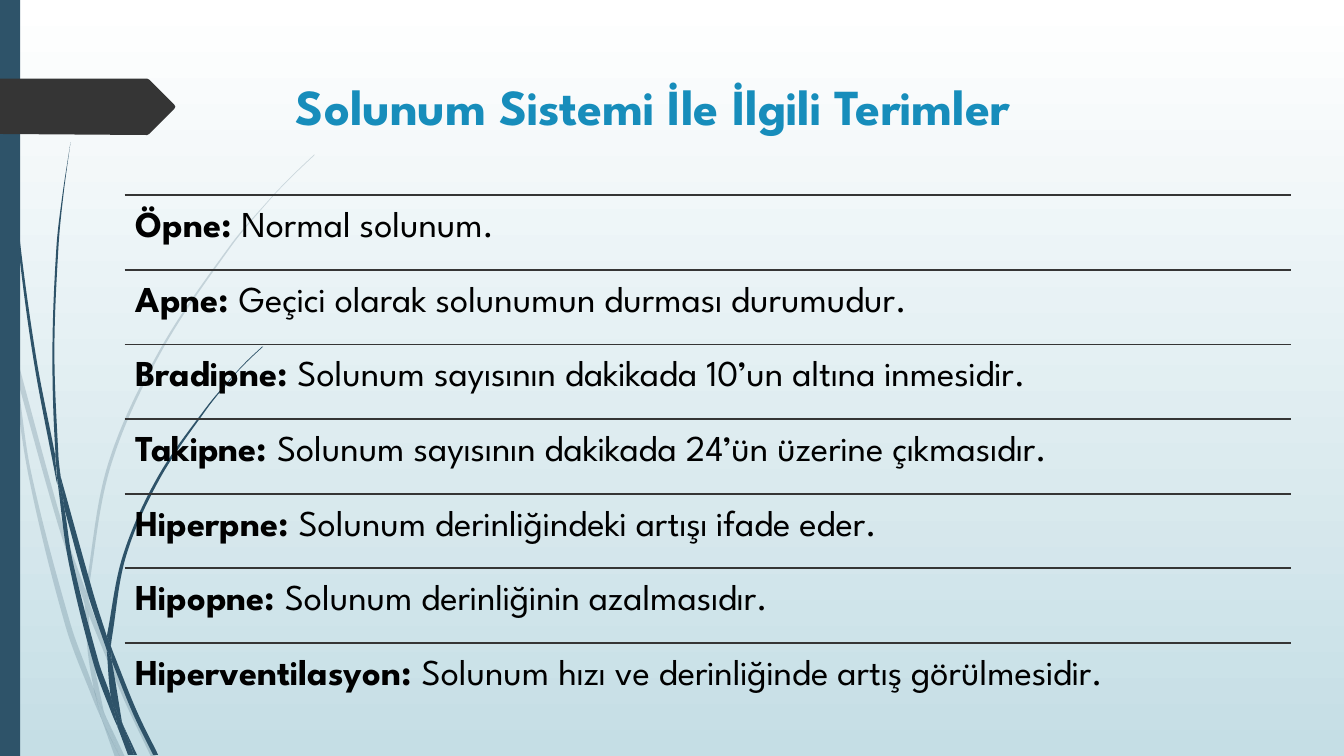
from dataclasses import dataclass

from lxml import etree
from pptx import Presentation
from pptx import util as u
from pptx.dml.color import RGBColor
from pptx.enum import lang, shapes, text
from pptx.oxml.ns import qn

Point = tuple[int, int]
FONT = "League Spartan"
NAVY, DARK, BLUE, BLACK = "2E5369", "353535", "178DBB", "000000"
LEFT, TOP, WIDTH, PITCH = 3.14, 4.92, 29.4, 1.88  # list of terms, in cm


@dataclass(frozen=True)
class Blade:
    """Piece of grass between two smooth sides, in hundredths of an inch."""
    up: list[Point]
    down: list[Point]


@dataclass(frozen=True)
class Term:
    name: str
    sense: str


FAINT = [
    Blade([(0, 282), (9, 322), (11, 350)], [(10, 344), (0, 299)]),
    Blade([(14, 345), (62, 520), (85, 586)], [(84, 599), (58, 522), (17, 376)]),
    Blade([(88, 596), (92, 607), (127, 692), (155, 751)],
          [(150, 751), (123, 694), (88, 610)]),
    Blade([(105, 711), (124, 751)], [(119, 751)]),
    Blade([(11, 350), (17, 376), (31, 469), (70, 619), (93, 683), (99, 707)],
          [(101, 714), (92, 693), (65, 621), (28, 470), (11, 350)]),
    Blade([(84, 599), (87, 646), (93, 683), (96, 692), (105, 711)],
          [(103, 706), (91, 646), (88, 610), (88, 608)]),
    Blade([(85, 586), (85, 584), (107, 461), (158, 348), (228, 244), (268, 197),
           (289, 175), (312, 153)],
          [(312, 154), (290, 175), (268, 198), (229, 245), (160, 349), (110, 462),
           (88, 584), (88, 596)]),
    Blade([(101, 714), (114, 751)], [(119, 751)]),
    Blade([(84, 599), (85, 586)], [(88, 596), (88, 610), (88, 608)]),
    Blade([(93, 683), (99, 707), (101, 714), (119, 751)], [(105, 711), (96, 692)]),
]
BOLD = [
    Blade([(3, 0), (4, 48), (7, 110), (17, 233), (33, 355), (56, 477), (57, 481)],
          [(55, 457), (55, 453), (36, 355), (19, 232), (8, 109), (5, 48), (4, 0)]),
    Blade([(60, 472), (93, 590), (106, 631)], [(106, 645), (88, 592), (64, 505)]),
    Blade([(110, 641), (113, 649), (136, 706), (157, 749)],
          [(152, 749), (132, 708), (111, 656)]),
    Blade([(57, 477), (64, 505), (72, 556), (98, 657), (110, 691), (116, 717)],
          [(117, 722), (111, 708), (93, 659), (68, 557), (57, 477)]),
    Blade([(60, 472), (58, 453), (54, 349), (58, 245), (63, 193), (70, 141)],
          [(70, 141), (62, 193), (56, 245), (52, 349), (55, 449), (60, 472)]),
    Blade([(122, 719), (136, 749)], [(133, 749)]),
    Blade([(55, 449), (60, 472), (64, 505)], [(57, 477), (55, 453)]),
    Blade([(106, 631), (122, 551), (156, 474), (204, 405), (231, 373), (245, 358),
           (260, 344)],
          [(261, 344), (245, 359), (231, 374), (205, 406), (158, 476), (125, 552),
           (111, 633), (110, 641)]),
    Blade([(117, 722), (131, 749)], [(127, 749)]),
    Blade([(106, 645), (110, 691), (116, 706), (122, 719)],
          [(121, 716), (111, 656), (109, 651)]),
    Blade([(106, 631), (110, 641), (111, 656)], [(109, 651), (106, 645)]),
    Blade([(110, 691), (116, 717), (117, 722), (130, 749)],
          [(133, 749), (122, 719), (116, 706)]),
]
ARROW = [(0, 78), (146, 78), (148, 79), (173, 104), (174, 106), (173, 108),
         (148, 133), (146, 134), (0, 133)]
TERMS = [
    Term("Öpne: ", "Normal solunum."),
    Term("Apne: ", "Geçici olarak solunumun durması durumudur."),
    Term("Bradipne: ", "Solunum sayısının dakikada 10’un altına inmesidir."),
    Term("Takipne: ", "Solunum sayısının dakikada 24’ün üzerine çıkmasıdır."),
    Term("Hiperpne: ", "Solunum derinliğindeki artışı ifade eder."),
    Term("Hipopne: ", "Solunum derinliğinin azalmasıdır."),
    Term("Hiperventilasyon: ", "Solunum hızı ve derinliğinde artış görülmesidir."),
]


def tint(code: str) -> RGBColor:
    return RGBColor.from_string(code)


def smooth(side: list[Point]) -> list[complex]:
    """Put two control points between neighbours, for cubic curves."""
    dots = [complex(*point) for point in side]
    last = len(dots) - 1
    slopes = []
    for i in range(last + 1):
        run = dots[min(i + 1, last)] - dots[max(i - 1, 0)]
        slopes.append(run / (abs(run) or 1))
    curve = dots[:1]
    for i in range(last):
        start, end = dots[i], dots[i + 1]
        reach = abs(end - start) / 3
        curve += [start + slopes[i] * reach, end - slopes[i + 1] * reach, end]
    return curve


def paint(shape, color: str, alpha: int = 100) -> None:
    shape.shadow.inherit = False
    shape.fill.solid()
    shape.fill.fore_color.rgb = tint(color)
    shape.line.fill.background()
    if alpha < 100:
        node = shape.element.spPr.find(qn("a:solidFill")).find(qn("a:srgbClr"))
        etree.SubElement(node, qn("a:alpha")).set("val", str(alpha * 1000))


def trace(slide, dots: list[complex]):
    """Draw a closed outline given in hundredths of an inch."""
    grid = u.Cm(2.54) / 100
    spots = [(round(dot.real * grid), round(dot.imag * grid)) for dot in dots]
    form = slide.shapes.build_freeform(*spots[0])
    form.add_line_segments(spots[1:], close=True)
    return form.convert_to_shape()


def bend(shape) -> None:
    """Turn each three lines of an outline into one cubic curve."""
    lines = list(shape.element.iter(qn("a:lnTo")))
    for first, second, third in zip(lines[::3], lines[1::3], lines[2::3]):
        first.tag = qn("a:cubicBezTo")
        for line in (second, third):
            first.append(line[0])
            line.getparent().remove(line)


def grow(slide, blade: Blade, alpha: int) -> None:
    up, down = smooth(blade.up), smooth(blade.down)
    gap = (down[0] - up[-1]) / 3
    shape = trace(slide, up + [up[-1] + gap, down[0] - gap] + down)
    bend(shape)
    paint(shape, NAVY, alpha)


def style(run, size: int, color: str, bold: bool) -> None:
    run.font.name, run.font.size, run.font.bold = FONT, u.Pt(size), bold
    run.font.color.rgb = tint(color)
    run.font.language_id = lang.MSO_LANGUAGE_ID.TURKISH


def frame(slide, left: float, top: float, width: float, height: float):
    """Add a wrapped text box, in cm, and return its text frame."""
    box = slide.shapes.add_textbox(u.Cm(left), u.Cm(top), u.Cm(width), u.Cm(height))
    box.text_frame.word_wrap = True
    box.text_frame.vertical_anchor = text.MSO_ANCHOR.TOP
    return box.text_frame


def list_term(slide, term: Term, top: float) -> None:
    rule = slide.shapes.add_connector(
        shapes.MSO_CONNECTOR.STRAIGHT,
        u.Cm(LEFT), u.Cm(top), u.Cm(LEFT + WIDTH), u.Cm(top))
    rule.line.color.rgb = tint(DARK)
    rule.line.width = u.Pt(1.25)
    etree.SubElement(rule.element.spPr, qn("a:effectLst"))

    body = frame(slide, LEFT, top, WIDTH, PITCH)
    body.margin_left = body.margin_right = u.Cm(0.28)
    body.margin_top = body.margin_bottom = u.Cm(0.28)
    line = body.paragraphs[0]
    line.text = term.name
    line.line_spacing = 0.9
    line.add_run().text = term.sense
    for run, bold in zip(line.runs, (True, False)):
        style(run, 26, BLACK, bold)


def main() -> None:
    deck = Presentation()
    deck.slide_width, deck.slide_height = u.Cm(33.87), u.Cm(19.05)
    slide = deck.slides.add_slide(deck.slide_layouts[6])

    back = slide.background.fill
    back.gradient()
    back.gradient_angle = 270
    for stop, color in zip(back.gradient_stops, ("FFFFFF", "C5DEE5")):
        stop.color.rgb = tint(color)

    for blades, alpha in ((FAINT, 20), (BOLD, 100)):
        for blade in blades:
            grow(slide, blade, alpha)
    band = slide.shapes.add_shape(
        shapes.MSO_SHAPE.RECTANGLE, 0, 0, u.Cm(0.51), deck.slide_height)
    paint(band, NAVY)
    paint(trace(slide, [complex(*point) for point in ARROW]), DARK)

    title = frame(slide, 7.21, 1.76, 24.77, 3.56)
    title.text = "Solunum Sistemi İle İlgili Terimler"
    style(title.paragraphs[0].runs[0], 36, BLUE, True)
    for i, term in enumerate(TERMS):
        list_term(slide, term, TOP + i * PITCH)
    deck.save("out.pptx")


if __name__ == "__main__":
    main()
